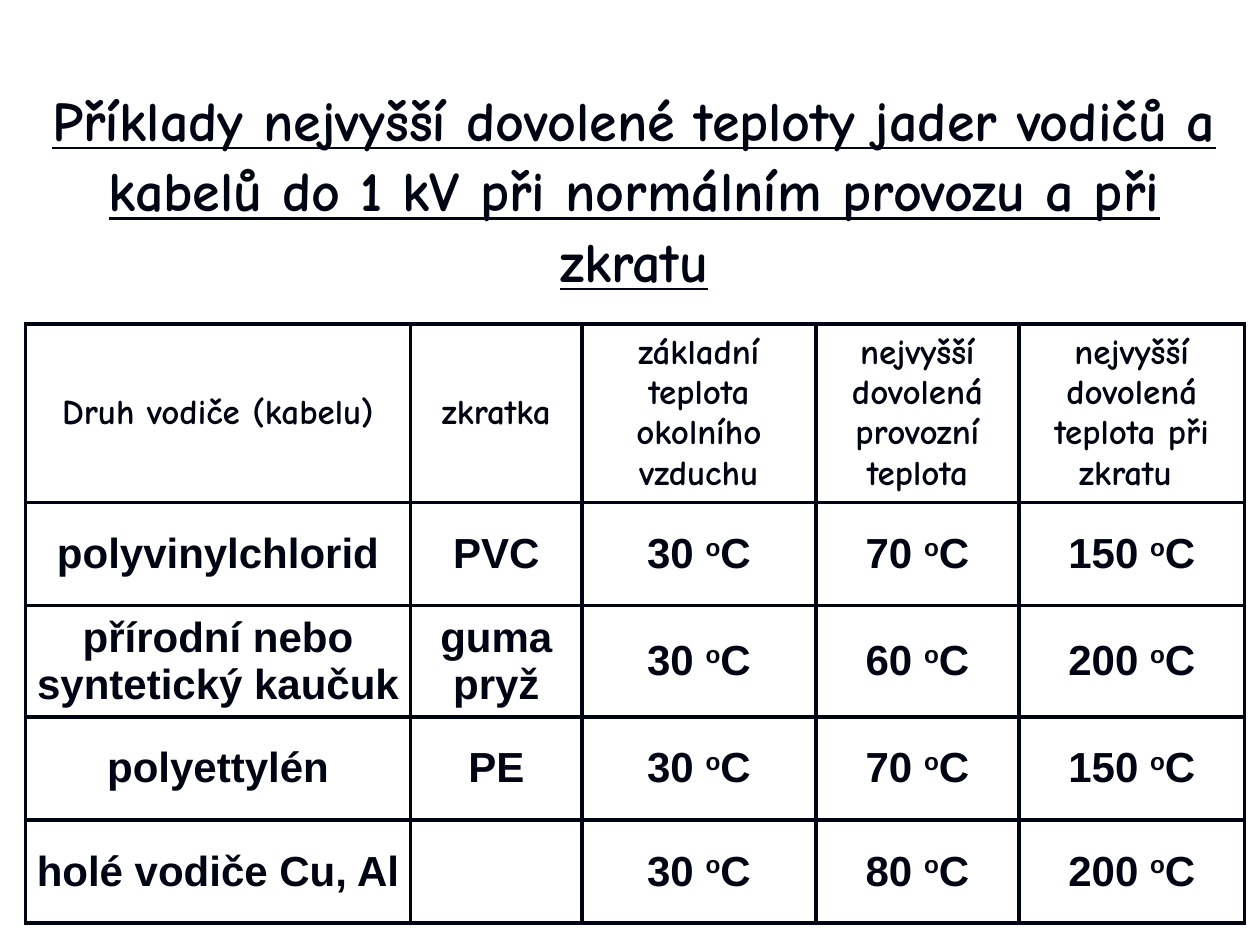
import dataclasses

import pptx
import pptx.dml.color
import pptx.enum.text
import pptx.oxml
import pptx.oxml.ns
import pptx.util
from pptx.util import Cm


@dataclasses.dataclass(frozen=True)
class Theme:
    ink: str = "000514"
    paper: str = "FFFFFF"
    heading_font: str = "Comic Neue"
    body_font: str = "Arial"
    title_size: int = 32
    header_size: int = 20
    body_size: int = 24
    border_width: float = 2.25


theme = Theme()


def style_span(span, font, size):
    span.font.name = font
    span.font.size = pptx.util.Pt(size)
    span.font.bold = True
    span.font.color.rgb = pptx.dml.color.RGBColor.from_string(theme.ink)


def add_borders(cell):
    properties = cell._tc.get_or_add_tcPr()
    width = int(pptx.util.Pt(theme.border_width))
    for side in ("lnL", "lnR", "lnT", "lnB"):
        properties.append(pptx.oxml.parse_xml(
            f'<a:{side} {pptx.oxml.ns.nsdecls("a")} w="{width}">'
            f'<a:solidFill><a:srgbClr val="{theme.ink}"/></a:solidFill></a:{side}>'
        ))


deck = pptx.Presentation()
deck.slide_width = Cm(25.4)
deck.slide_height = Cm(19.05)
page = deck.slides.add_slide(deck.slide_layouts[5])

title = page.shapes.title
title.left, title.top, title.width, title.height = Cm(0.69), Cm(1.52), Cm(24.2), Cm(4.37)
frame = title.text_frame
frame.text = (
    "Příklady nejvyšší dovolené teploty jader vodičů a kabelů do 1 kV "
    "při normálním provozu a při zkratu"
)
frame.word_wrap = True
frame.auto_size = pptx.enum.text.MSO_AUTO_SIZE.SHAPE_TO_FIT_TEXT
frame.vertical_anchor = pptx.enum.text.MSO_ANCHOR.TOP
para = frame.paragraphs[0]
para.alignment = pptx.enum.text.PP_ALIGN.CENTER
para.line_spacing = 1.05
style_span(para.runs[0], theme.heading_font, theme.title_size)
para.runs[0].font.underline = True

headers = [
    "Druh vodiče (kabelu)",
    "zkratka",
    "základní teplota okolního vzduchu",
    "nejvyšší dovolená provozní teplota",
    "nejvyšší dovolená teplota při zkratu ",
]
conductors = [
    ["polyvinylchlorid", "PVC", 30, 70, 150],
    ["přírodní nebo syntetický kaučuk", "guma pryž", 30, 60, 200],
    ["polyettylén", "PE", 30, 70, 150],
    ["holé vodiče Cu, Al", "", 30, 80, 200],
]
rows = [headers] + conductors
column_widths = [7.77, 3.45, 4.72, 4.09, 4.55]
row_heights = [3.6, 2.08, 2.24, 2.08, 2.08]

table = page.shapes.add_table(
    len(rows), len(headers), Cm(0.51), Cm(6.53), Cm(sum(column_widths)), Cm(sum(row_heights))
).table
table.first_row = False
table.horz_banding = False
for column, width in zip(table.columns, column_widths):
    column.width = Cm(width)
for row, height in zip(table.rows, row_heights):
    row.height = Cm(height)

for row_index, values in enumerate(rows):
    if row_index == 0:
        font, size = theme.heading_font, theme.header_size
    else:
        font, size = theme.body_font, theme.body_size
    for column_index, value in enumerate(values):
        cell = table.cell(row_index, column_index)
        add_borders(cell)
        cell.fill.solid()
        cell.fill.fore_color.rgb = pptx.dml.color.RGBColor.from_string(theme.paper)
        cell.vertical_anchor = pptx.enum.text.MSO_ANCHOR.MIDDLE
        cell.margin_left = cell.margin_right = cell.margin_top = cell.margin_bottom = Cm(0.1)
        para = cell.text_frame.paragraphs[0]
        para.alignment = pptx.enum.text.PP_ALIGN.CENTER
        para.space_before = pptx.util.Pt(0.2 * size)
        is_temperature = isinstance(value, int)
        parts = [f"{value} ", "o", "C"] if is_temperature else [value] if value else []
        for part in parts:
            span = para.add_run()
            span.text = part
            style_span(span, font, size)
        if is_temperature:
            para.runs[1].font._element.set("baseline", "30000")

deck.save("out.pptx")
